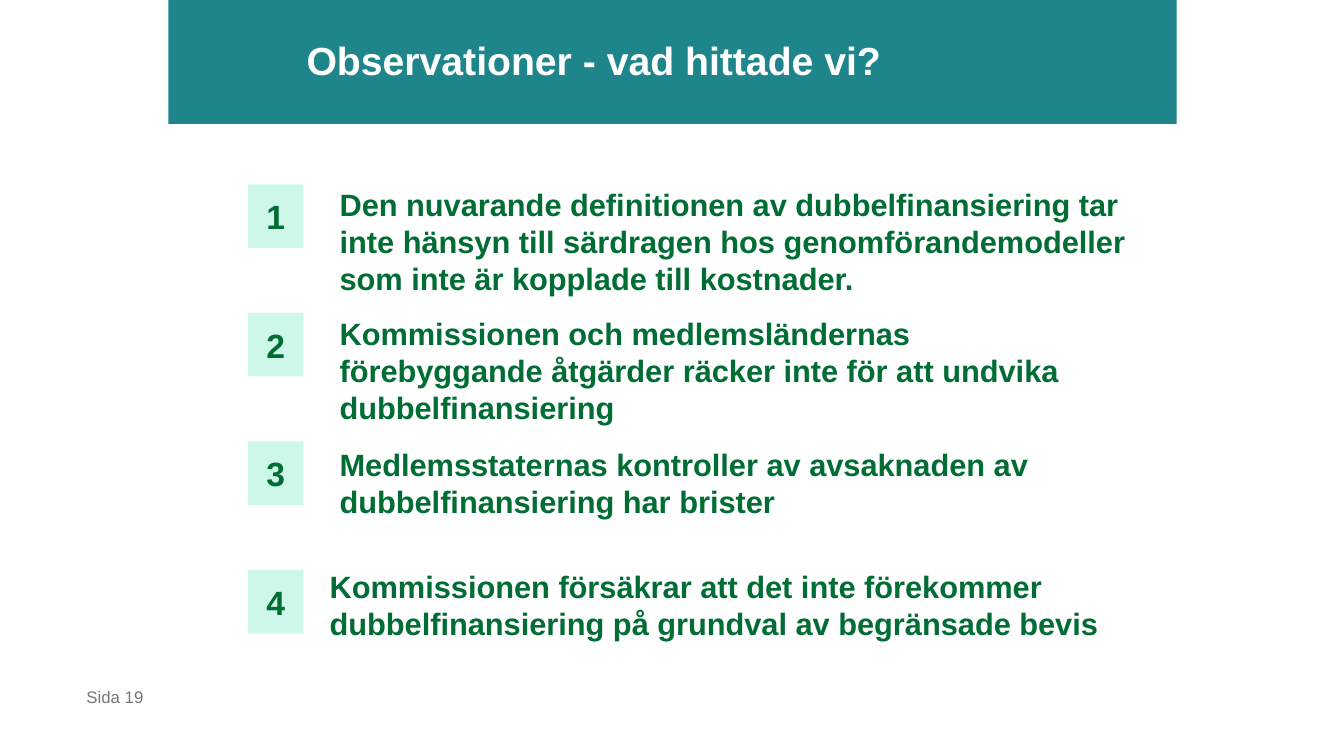
from pptx import Presentation
from pptx.dml.color import RGBColor
from pptx.enum.shapes import MSO_SHAPE as Shape
from pptx.enum.text import MSO_ANCHOR as Anchor, PP_ALIGN as Align
from pptx.util import Inches, Pt

COLORS = {
    "teal": "1E858B",
    "mint": "CDF7E9",
    "green": "006D34",
    "white": "FFFFFF",
    "gray": "767676",
}


def add_block(left, top, width, height, fill):
    shape = slide.shapes.add_shape(
        Shape.RECTANGLE, Inches(left), Inches(top), Inches(width), Inches(height))
    shape.shadow.inherit = False
    shape.fill.solid()
    shape.fill.fore_color.rgb = RGBColor.from_string(COLORS[fill])
    shape.line.fill.background()
    return shape


def write_text(shape, text, size, color, bold=True, anchor=Anchor.TOP,
               align=Align.LEFT, inset=(0.1, 0.05), spacing=None):
    frame = shape.text_frame
    frame.word_wrap = True
    frame.vertical_anchor = anchor
    frame.margin_left = frame.margin_right = Inches(inset[0])
    frame.margin_top = frame.margin_bottom = Inches(inset[1])
    paragraph = frame.paragraphs[0]
    paragraph.alignment = align
    if spacing:
        paragraph.line_spacing = spacing
    run = paragraph.add_run()
    run.text = text
    run.font.name = "Arial"
    run.font.size = Pt(size)
    run.font.bold = bold
    run.font.color.rgb = RGBColor.from_string(COLORS[color])


presentation = Presentation()
presentation.slide_width = Inches(13.33)
presentation.slide_height = Inches(7.5)
slide = presentation.slides.add_slide(presentation.slide_layouts[6])

# Page number
page_box = slide.shapes.add_textbox(Inches(0.76), Inches(6.71), Inches(3), Inches(0.4))
write_text(page_box, "Sida 19", 12, "gray", bold=False, anchor=Anchor.MIDDLE)

# Title band
add_block(1.67, 0, 10, 1.23, "teal")
title_box = slide.shapes.add_textbox(Inches(3.04), Inches(0.44), Inches(8.35), Inches(0.39))
write_text(title_box, "Observationer - vad hittade vi?", 28, "white",
           anchor=Anchor.BOTTOM, inset=(0, 0), spacing=0.9)

# Numbered observations: text, text top, text width, text inset
observations = [
    ("Den nuvarande definitionen av dubbelfinansiering tar inte hänsyn till "
     "särdragen hos genomförandemodeller som inte är kopplade till kostnader.",
     1.79, 8.11, (0.1, 0.05)),
    ("Kommissionen och medlemsländernas förebyggande åtgärder räcker inte "
     "för att undvika dubbelfinansiering", 3.07, 7.87, (0.1, 0.05)),
    ("Medlemsstaternas kontroller av avsaknaden av dubbelfinansiering har brister",
     4.37, 8.14, (0.1, 0.05)),
    ("Kommissionen försäkrar att det inte förekommer dubbelfinansiering på "
     "grundval av begränsade bevis", 5.63, 8.14, (0, 0)),
]
for index, (text, top, width, inset) in enumerate(observations):
    number_block = add_block(2.46, 1.83 + index * 1.275, 0.55, 0.63, "mint")
    write_text(number_block, str(index + 1), 24, "green",
               anchor=Anchor.MIDDLE, align=Align.CENTER)
    text_box = slide.shapes.add_textbox(
        Inches(3.27), Inches(top), Inches(width), Inches(0.66))
    write_text(text_box, text, 22, "green", inset=inset)

presentation.save("out.pptx")
